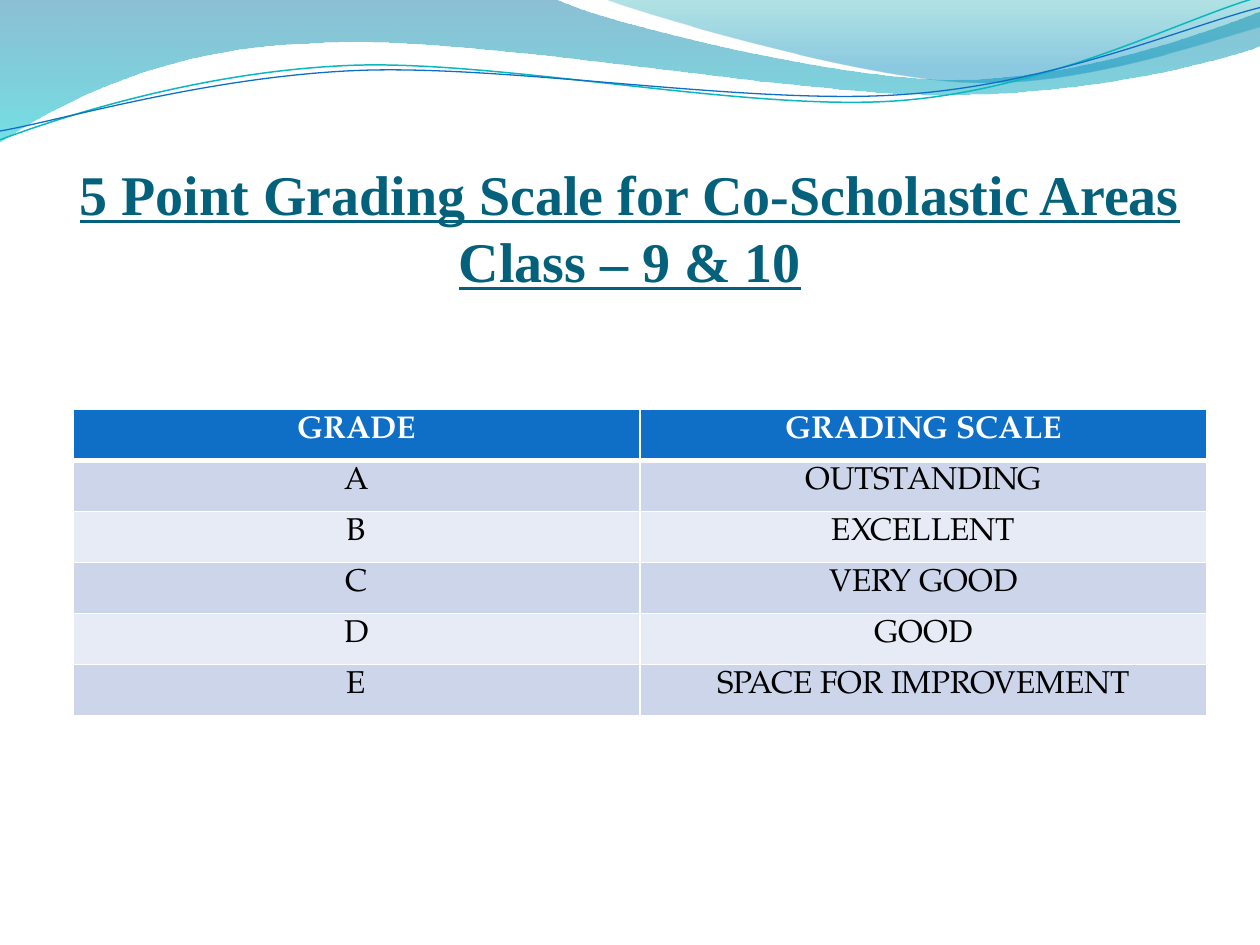
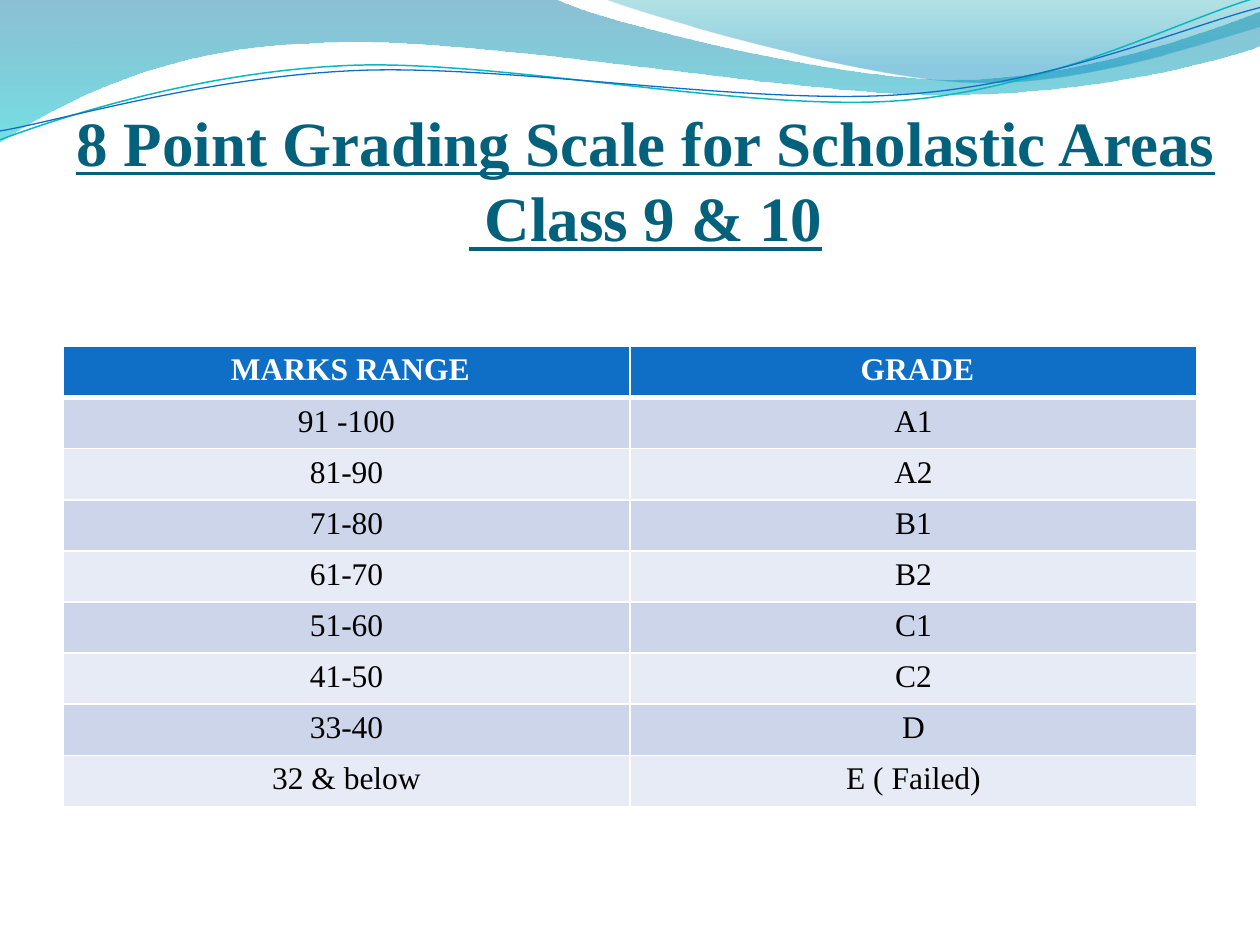
from lxml import etree
from pptx import Presentation
from pptx.dml.color import RGBColor
from pptx.enum import text
from pptx.oxml import ns
from pptx.util import Inches, Pt

# Shared style
SERIF = "Times New Roman"
PAGELLA = "TeX Gyre Pagella"
TITLE_COLOR = "04617B"
HEADER_FILL = "0F6FC6"
BAND_FILLS = ("CCD5EA", "E7EBF5")
WHITE = "FFFFFF"
BLACK = "000000"

# Wave outlines in inches: a pair is a straight step, six numbers are a Bezier curve
WIDE_WAVE = [
    (0, 0), (4.4, -0.01),
    (4.76, 0.17, 6.64, 0.63, 7.58, 0.63), (8.53, 0.63, 9.58, 0.26, 10, 0.09),
    (10.01, 0.36),
    (9.83, 0.44, 8.7, 0.76, 7.46, 0.75), (6.22, 0.75, 3.82, 0.28, 2.57, 0.34),
    (1.29, 0.36, 0.46, 0.83, -0.01, 1.13), (0, 0),
]
RIGHT_WAVE = [
    (4.79, -0.01),
    (5.09, 0.11, 6.82, 0.62, 7.69, 0.65), (8.56, 0.69, 9.61, 0.32, 10, 0.21),
    (10, 0), (4.79, -0.01),
]
TEAL_LINE = [
    (0, 1.11),
    (0.48, 0.93, 1.58, 0.57, 2.77, 0.52), (3.95, 0.47, 5.93, 0.89, 7.13, 0.8),
    (8.33, 0.71, 9.38, 0.15, 9.98, -0.02),
]
BLUE_LINE = [
    (0, 1.04),
    (0.47, 0.96, 1.64, 0.61, 2.83, 0.56), (4.03, 0.51, 5.97, 0.84, 7.17, 0.75),
    (8.36, 0.67, 9.41, 0.21, 10, 0.06),
]

# Each stop: position, colour, opacity in percent
WIDE_STOPS = [(0, "0074A1", 45), (1, "00C6CF", 55)]
RIGHT_STOPS = [(0, "00A1A9", 30), (0.8, "008BBF", 45)]

CO_SCHOLASTIC_ROWS = [
    ("GRADE", "GRADING SCALE"),
    ("A", "OUTSTANDING"),
    ("B", "EXCELLENT"),
    ("C", "VERY GOOD"),
    ("D", "GOOD"),
    ("E", "SPACE FOR IMPROVEMENT"),
]
SCHOLASTIC_ROWS = [
    (" MARKS RANGE", " GRADE"),
    ("91 -100", "A1"),
    ("81-90", "A2"),
    ("71-80", "B1"),
    ("61-70", "B2"),
    ("51-60", "C1"),
    ("41-50", "C2"),
    ("33-40", "D"),
    ("32 & below", "E ( Failed)"),
]


def color(hex_value):
    return RGBColor.from_string(hex_value)


def style_font(paragraph, name, size, hex_value, bold=False, underline=False):
    for run in paragraph.runs:
        font = run.font
        font.name, font.size = name, Pt(size)
        font.bold, font.underline = bold, underline
        font.color.rgb = color(hex_value)


# Waves
def bend_segments(shape, outline):
    """Turn the straight segments that stand for curves into Bezier curves."""
    segments = list(shape.element.iter(ns.qn("a:lnTo")))
    for segment, step in zip(segments, outline[1:]):
        if len(step) == 2:
            continue
        curve = etree.Element(ns.qn("a:cubicBezTo"))
        for x, y in zip(step[::2], step[1::2]):
            etree.SubElement(curve, ns.qn("a:pt"), x=str(Inches(x) - shape.left),
                             y=str(Inches(y) - shape.top))
        segment.getparent().replace(segment, curve)


def add_outline(slide, outline, close):
    points = [(Inches(step[-2]), Inches(step[-1])) for step in outline]
    builder = slide.shapes.build_freeform(*points[0])
    builder.add_line_segments(points[1:], close=close)
    shape = builder.convert_to_shape()
    bend_segments(shape, outline)
    shape.shadow.inherit = False
    return shape


def add_wave(slide, outline, stops):
    shape = add_outline(slide, outline, close=True)
    shape.line.fill.background()
    shape.fill.gradient()
    shape.fill.gradient_angle = 270
    for stop, (position, hex_value, _) in zip(shape.fill.gradient_stops, stops):
        stop.position = position
        stop.color.rgb = color(hex_value)
    for node, (_, _, opacity) in zip(shape.element.iter(ns.qn("a:srgbClr")), stops):
        etree.SubElement(node, ns.qn("a:alpha"), val=str(opacity * 1000))
    return shape


def add_wave_line(slide, outline, hex_value, width):
    shape = add_outline(slide, outline, close=False)
    shape.fill.background()
    shape.line.color.rgb = color(hex_value)
    shape.line.width = Pt(width)
    return shape


def move_waves_to_layout(slide):
    """Draw the waves once and hand them to the layout that all slides use."""
    layout_shapes = slide.slide_layout.shapes
    for placeholder in list(layout_shapes):
        layout_shapes.element.remove(placeholder.element)
    waves = [
        add_wave(slide, WIDE_WAVE, WIDE_STOPS),
        add_wave(slide, RIGHT_WAVE, RIGHT_STOPS),
        add_wave_line(slide, TEAL_LINE, "0AB8BF", 0.85),
        add_wave_line(slide, BLUE_LINE, HEADER_FILL, 0.75),
    ]
    for wave in waves:
        layout_shapes.element.append(wave.element)


# Title
def add_title(slide, wording, box, size):
    frame = slide.shapes.add_textbox(*map(Inches, box)).text_frame
    frame.word_wrap = True
    frame.vertical_anchor = text.MSO_ANCHOR.BOTTOM
    frame.margin_left = frame.margin_right = frame.margin_bottom = 0
    paragraph = frame.paragraphs[0]
    paragraph.text = wording
    paragraph.alignment = text.PP_ALIGN.CENTER
    style_font(paragraph, SERIF, size, TITLE_COLOR, bold=True, underline=True)


# Table
def set_borders(cell, top, bottom):
    properties = cell._tc.get_or_add_tcPr()
    widths = {"a:lnL": 1, "a:lnR": 1, "a:lnT": top, "a:lnB": bottom}
    for index, (tag, width) in enumerate(widths.items()):
        border = etree.Element(ns.qn(tag), w=str(Pt(width)))
        fill = etree.SubElement(border, ns.qn("a:solidFill"))
        etree.SubElement(fill, ns.qn("a:srgbClr"), val=WHITE)
        properties.insert(index, border)


def add_grade_table(slide, rows, box, font_name):
    frame = slide.shapes.add_table(len(rows), len(rows[0]), *map(Inches, box))
    for row_index, row in enumerate(rows):
        header = row_index == 0
        for column_index, wording in enumerate(row):
            cell = frame.table.cell(row_index, column_index)
            cell.fill.solid()
            cell.fill.fore_color.rgb = color(
                HEADER_FILL if header else BAND_FILLS[(row_index - 1) % 2])
            set_borders(cell, top=3 if row_index == 1 else 1, bottom=3 if header else 1)
            paragraph = cell.text_frame.paragraphs[0]
            paragraph.text = wording
            paragraph.alignment = text.PP_ALIGN.CENTER
            style_font(paragraph, font_name, 18, WHITE if header else BLACK, bold=header)


def main():
    presentation = Presentation()
    presentation.slide_width, presentation.slide_height = Inches(10), Inches(7.5)
    blank_layout = presentation.slide_layouts[6]

    # Co-scholastic areas
    slide = presentation.slides.add_slide(blank_layout)
    move_waves_to_layout(slide)
    add_title(slide, "5 Point Grading Scale for Co-Scholastic Areas\nClass – 9 & 10",
              (0.33, 0.77, 9.34, 1.56), 32)
    add_grade_table(slide, CO_SCHOLASTIC_ROWS, (0.58, 3.25, 9, 2.43), PAGELLA)

    # Scholastic areas
    slide = presentation.slides.add_slide(blank_layout)
    add_title(slide, "8 Point Grading Scale for Scholastic Areas\n Class 9 & 10",
              (0.25, 0.58, 9.75, 1.44), 36)
    add_grade_table(slide, SCHOLASTIC_ROWS, (0.5, 2.75, 9, 3.65), SERIF)

    presentation.save("out.pptx")


if __name__ == "__main__":
    main()
